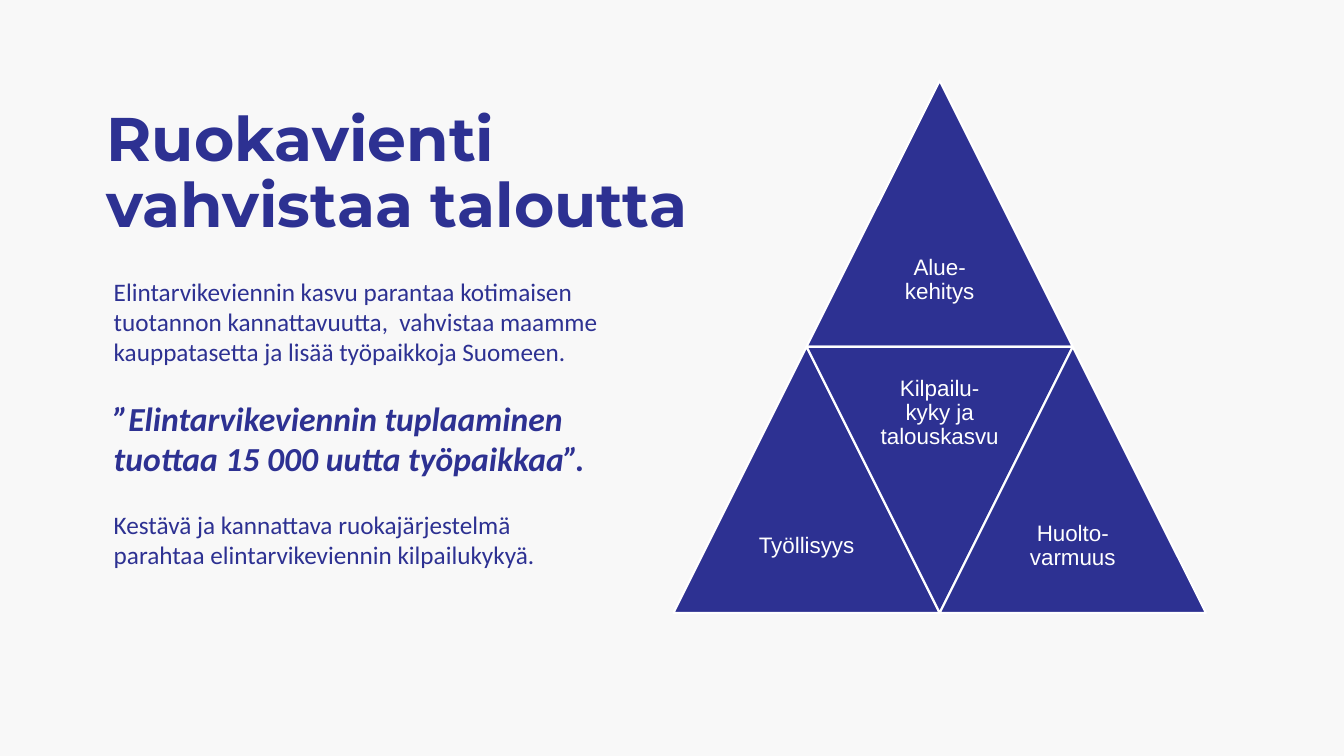
from pptx import Presentation
from pptx.dml.color import RGBColor
from pptx.enum.shapes import MSO_SHAPE
from pptx.enum.text import MSO_ANCHOR as ANCHOR, PP_ALIGN as ALIGN
from pptx.util import Inches, Pt

NAVY = RGBColor(0x2D, 0x31, 0x92)
WHITE = RGBColor(0xFF, 0xFF, 0xFF)
PALE = RGBColor(0xF8, 0xF8, 0xF8)

prs = Presentation()
prs.slide_width, prs.slide_height = Inches(13.33), Inches(7.5)
s = prs.slides.add_slide(prs.slide_layouts[6])
s.background.fill.solid()
s.background.fill.fore_color.rgb = PALE


def add_text(x, y, w, h, anchor=ANCHOR.TOP):
    tf = s.shapes.add_textbox(Inches(x), Inches(y), Inches(w), Inches(h)).text_frame
    tf.word_wrap = True
    tf.vertical_anchor = anchor
    return tf


def style(p, name, size, color, bold=False, italic=False):
    for r in p.runs:
        r.font.name, r.font.size = name, Pt(size)
        r.font.bold, r.font.italic = bold, italic
        r.font.color.rgb = color


tf = add_text(0.96, 0.93, 6.34, 1.6, ANCHOR.MIDDLE)
tf.text = "Ruokavienti vahvistaa taloutta"
p = tf.paragraphs[0]
p.line_spacing = 0.9
style(p, "Montserrat", 44, NAVY, bold=True)

body = [
    ("Elintarvikeviennin kasvu parantaa kotimaisen tuotannon kannattavuutta,  "
     "vahvistaa maamme kauppatasetta ja lisää työpaikkoja Suomeen.", 18, False),
    ("”Elintarvikeviennin tuplaaminen tuottaa 15 000 uutta työpaikkaa”.", 24, True),
    ("Kestävä ja kannattava ruokajärjestelmä parahtaa elintarvikeviennin "
     "kilpailukykyä.", 18, False),
]
tf = add_text(1.03, 2.69, 5.07, 3.03)
for i, (text, size, quote) in enumerate(body):
    p = tf.paragraphs[0] if i == 0 else tf.add_paragraph()
    p.text = text
    if i:
        p.space_before = Pt(22)
    style(p, "Calibri", size, NAVY, quote, quote)

LEFT, TOP, UNIT = 6.68, 0.8, 1.32
triangles = [
    ("Alue-\vkehitys", 1, 0, False),
    ("Työllisyys", 0, 2, False),
    ("Kilpailu-\vkyky ja talouskasvu", 1, 2, True),
    ("Huolto-varmuus", 2, 2, False),
]
for label, col, row, flipped in triangles:
    x, y = LEFT + col * UNIT, TOP + row * UNIT
    sp = s.shapes.add_shape(MSO_SHAPE.ISOSCELES_TRIANGLE, Inches(x), Inches(y),
                            Inches(2 * UNIT), Inches(2 * UNIT))
    sp.shadow.inherit = False
    sp.rotation = 180 if flipped else 0
    sp.fill.solid()
    sp.fill.fore_color.rgb = NAVY
    sp.line.color.rgb = WHITE
    sp.line.width = Pt(1.5)

    label_y = y if flipped else y + UNIT
    tf = add_text(x + UNIT / 2, label_y, UNIT, UNIT, ANCHOR.MIDDLE)
    tf.margin_left = tf.margin_right = tf.margin_top = tf.margin_bottom = Inches(0.07)
    tf.text = label
    p = tf.paragraphs[0]
    p.alignment = ALIGN.CENTER
    p.line_spacing = 0.9
    style(p, "Arial", 16, WHITE)

prs.save("out.pptx")
